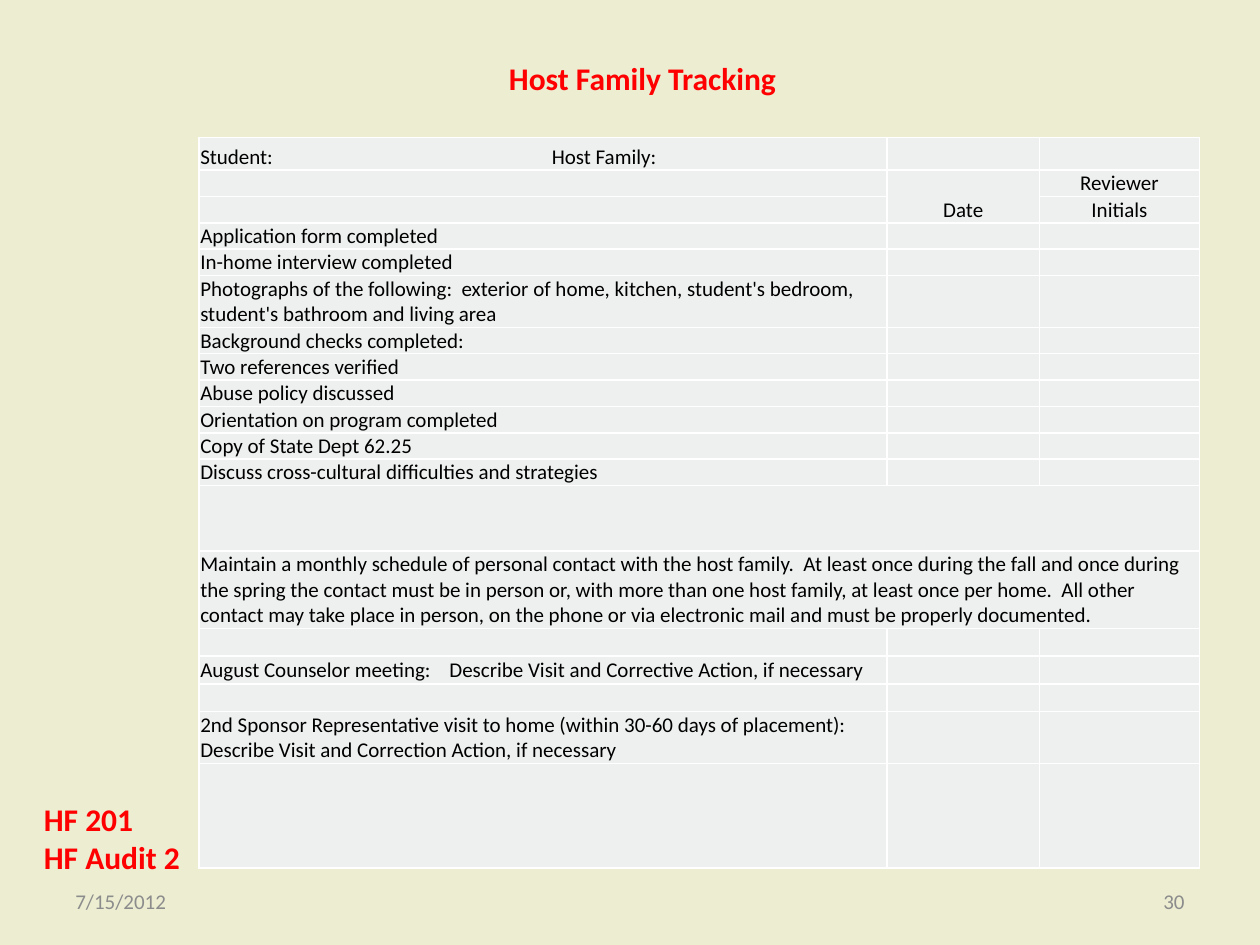
from lxml import etree
from pptx import Presentation
from pptx.dml.color import RGBColor
from pptx.enum import text as t
from pptx.oxml import ns
from pptx.util import Inches, Pt

COLORS = {"page": "ECEDD1", "cell": "EEF0EF", "border": "FFFFFF",
          "heading": "FF0000", "body": "000000", "footer": "8C8C8C"}
FONT = "Calibri"
LEFT, CENTER, RIGHT = t.PP_ALIGN.LEFT, t.PP_ALIGN.CENTER, t.PP_ALIGN.RIGHT
TOP, MIDDLE, BOTTOM = (t.MSO_ANCHOR.TOP, t.MSO_ANCHOR.MIDDLE,
                       t.MSO_ANCHOR.BOTTOM)

COLUMN_WIDTHS = [5.46, 1.21, 1.27]
STUDENT_ROW, DATE_ROW = 0, 1
FULL_WIDTH_ROWS = (12, 13)
# Each row: height, then the text of its leading cells
ROWS = [
    (0.26, "Student:\tHost Family:"),
    (0.2, "", "Date", "Reviewer"),
    (0.2, "", "", "Initials"),
    (0.2, "Application form completed"),
    (0.2, "In-home interview completed"),
    (0.39, "Photographs of the following:  exterior of home, kitchen, "
           "student's bedroom, student's bathroom and living area"),
    (0.2, "Background checks completed:"),
    (0.2, "Two references verified"),
    (0.2, "Abuse policy discussed"),
    (0.2, "Orientation on program completed"),
    (0.2, "Copy of State Dept 62.25"),
    (0.2, "Discuss cross-cultural difficulties and strategies"),
    (0.52,),
    (0.58, "Maintain a monthly schedule of personal contact with the host "
           "family.  At least once during the fall and once during the spring "
           "the contact must be in person or, with more than one host family, "
           "at least once per home.  All other contact may take place in "
           "person, on the phone or via electronic mail and must be properly "
           "documented."),
    (0.22,),
    (0.22, "August Counselor meeting:    Describe Visit and Corrective "
           "Action, if necessary"),
    (0.22,),
    (0.39, "2nd Sponsor Representative visit to home (within 30-60 days of "
           "placement):  Describe Visit and Correction Action, if necessary"),
    (0.83,),
]


def rgb(name):
    return RGBColor.from_string(COLORS[name])


def style(para, size, color, align=LEFT, bold=False):
    para.alignment = align
    font = para.font
    font.name, font.size, font.bold = FONT, Pt(size), bold
    font.color.rgb = rgb(color)


def fill_text(shape, box, lines, size, color, align=LEFT, anchor=TOP,
              bold=False):
    shape.left, shape.top, shape.width, shape.height = map(Inches, box)
    frame = shape.text_frame
    frame.text = "\n".join(lines)
    frame.word_wrap = True
    frame.auto_size = t.MSO_AUTO_SIZE.NONE
    frame.vertical_anchor = anchor
    for para in frame.paragraphs:
        style(para, size, color, align, bold)


def add_label(page, box, lines, *args, **options):
    label = page.shapes.add_textbox(*map(Inches, box))
    fill_text(label, box, lines, *args, **options)


def add_borders(cell):
    properties = cell._tc.get_or_add_tcPr()
    for index, side in enumerate(("a:lnL", "a:lnR", "a:lnT", "a:lnB")):
        line = etree.Element(ns.qn(side), w=str(Pt(1)))
        solid = etree.SubElement(line, ns.qn("a:solidFill"))
        etree.SubElement(solid, ns.qn("a:srgbClr"), val=COLORS["border"])
        properties.insert(index, line)


def add_tab_stop(para, position):
    stops = etree.Element(ns.qn("a:tabLst"))
    etree.SubElement(stops, ns.qn("a:tab"), pos=str(Inches(position)),
                     algn="l")
    # The tab list comes before the paragraph's default font
    para._p.get_or_add_pPr().insert(0, stops)


def format_cell(cell, words, align, anchor):
    cell.text = words
    cell.margin_left = cell.margin_right = Inches(0.01)
    cell.margin_top = Pt(0.4)
    cell.margin_bottom = 0
    cell.vertical_anchor = anchor
    cell.fill.solid()
    cell.fill.fore_color.rgb = rgb("cell")
    add_borders(cell)
    style(cell.text_frame.paragraphs[0], 12, "body", align)


def add_checklist(page, box):
    table = page.shapes.add_table(len(ROWS), len(COLUMN_WIDTHS),
                                  *map(Inches, box)).table
    table.first_row = table.horz_banding = False
    for column, width in zip(table.columns, COLUMN_WIDTHS):
        column.width = Inches(width)
    for r, (height, *words) in enumerate(ROWS):
        table.rows[r].height = Inches(height)
        words += [""] * (len(COLUMN_WIDTHS) - len(words))
        for c, word in enumerate(words):
            format_cell(table.cell(r, c), word, CENTER if c else LEFT,
                        BOTTOM if r <= DATE_ROW + 1 else MIDDLE)
    for r in FULL_WIDTH_ROWS:
        table.cell(r, 0).merge(table.cell(r, 2))
    table.cell(DATE_ROW, 1).merge(table.cell(DATE_ROW + 1, 1))
    add_tab_stop(table.cell(STUDENT_ROW, 0).text_frame.paragraphs[0], 2.79)


def add_footer(page, box):
    left, top, width, height = box
    part = 2.33
    for x, words, align in ((left, "7/15/2012", LEFT),
                            (left + width - part, "30", RIGHT)):
        add_label(page, (x, top, part, height), [words], 12, "footer",
                  align, MIDDLE)


def main():
    deck = Presentation()
    deck.slide_width, deck.slide_height = Inches(10), Inches(7.5)
    page = deck.slides.add_slide(deck.slide_layouts[5])
    page.background.fill.solid()
    page.background.fill.fore_color.rgb = rgb("page")

    # Footer and form codes
    add_footer(page, (0.5, 6.95, 9, 0.4))
    add_label(page, (0.25, 6.3, 2.08, 0.71), ["HF 201", "HF Audit 2"],
              18, "heading", bold=True)
    # Tracking table
    add_checklist(page, (1.58, 1.09, 7.94, 5.77))
    # Title
    fill_text(page.shapes.title, (3.83, 0.42, 2.54, 0.4),
              ["Host Family Tracking"], 18, "heading", CENTER, bold=True)
    deck.save("out.pptx")


if __name__ == "__main__":
    main()
